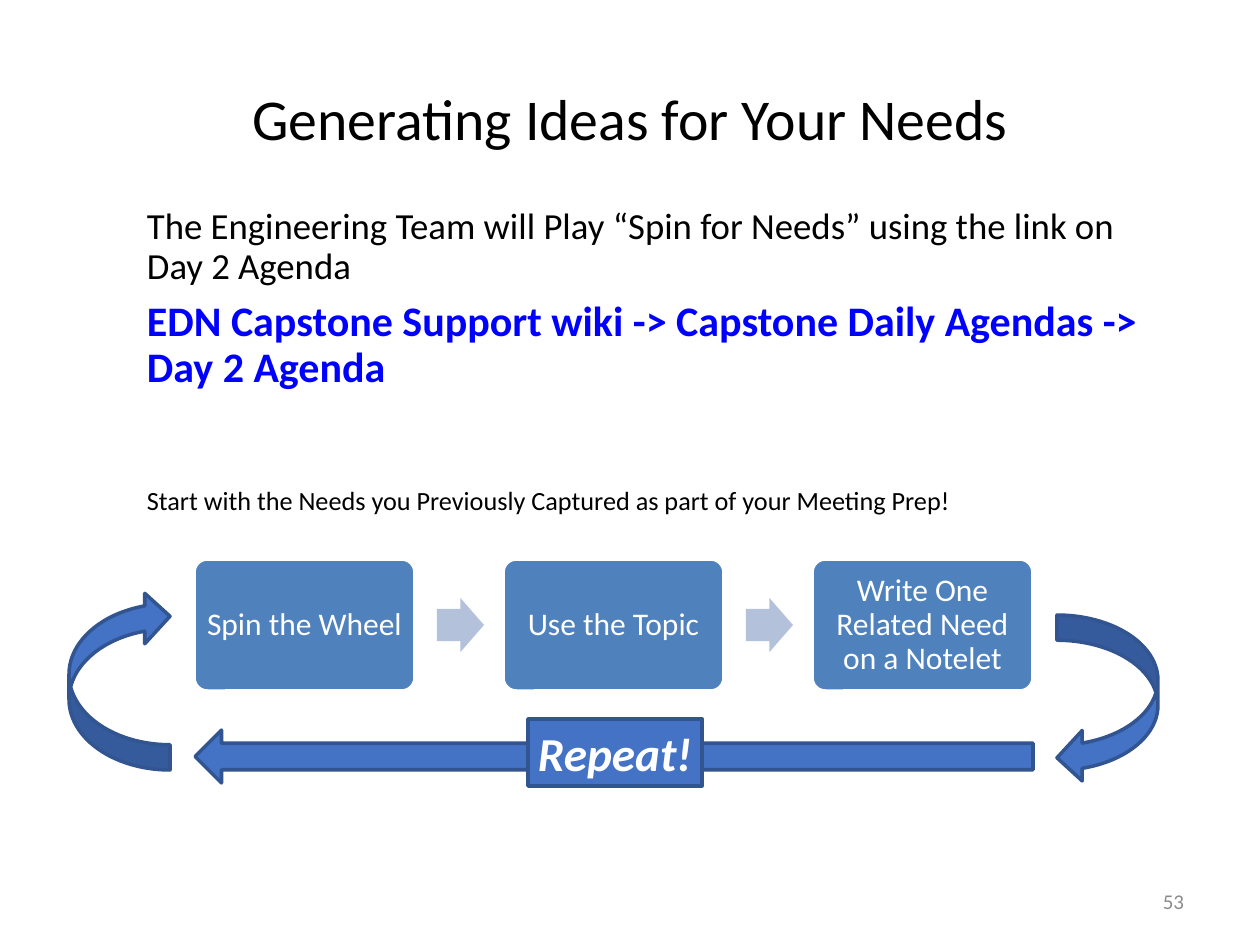
from pptx import Presentation
from pptx.dml.color import RGBColor
from pptx.enum.shapes import MSO_SHAPE as Kind
from pptx.enum.text import MSO_ANCHOR as Anchor, PP_ALIGN as Align
from pptx.util import Emu, Pt

SCALE = 914400 / 126
BLACK = RGBColor(0x00, 0x00, 0x00)
WHITE = RGBColor(0xFF, 0xFF, 0xFF)
LINK = RGBColor(0x00, 0x00, 0xFF)
GREY = RGBColor(0x8C, 0x8C, 0x8C)
STEP = RGBColor(0x4F, 0x81, 0xBD)
PALE = RGBColor(0xB3, 0xC1, 0xDB)
BLUE = RGBColor(0x44, 0x72, 0xC4)
EDGE = RGBColor(0x32, 0x54, 0x90)


def px(num):
    return Emu(round(num * SCALE))


def write(para, text, size=18, color=BLACK, bold=False, slant=False,
          align=Align.LEFT, lead=0.9, before=0, indent=0):
    para.alignment = align
    para.line_spacing = lead
    para.space_before = Pt(before)
    if indent:
        props = para._p.get_or_add_pPr()
        props.set("marL", str(px(indent)))
        props.set("indent", "0")
    run = para.add_run()
    run.text = text
    font = run.font
    font.name = "Calibri"
    font.size = Pt(size)
    font.bold = bold
    font.italic = slant
    font.color.rgb = color


def frame(shape, anchor=Anchor.MIDDLE, wrap=True, inset=(13, 6)):
    body = shape.text_frame
    body.word_wrap = wrap
    body.vertical_anchor = anchor
    body.margin_left = body.margin_right = px(inset[0])
    body.margin_top = body.margin_bottom = px(inset[1])
    return body


def label(slide, box, anchor=Anchor.MIDDLE):
    return frame(slide.shapes.add_textbox(*map(px, box)), anchor)


def draw(slide, kind, box, fill=BLUE, edge=EDGE, adjust=(), turn=0):
    shape = slide.shapes.add_shape(kind, *map(px, box))
    shape.shadow.inherit = False
    shape.fill.solid()
    shape.fill.fore_color.rgb = fill
    if edge is None:
        shape.line.fill.background()
    else:
        shape.line.color.rgb = edge
        shape.line.width = Pt(2)
    for spot, value in enumerate(adjust):
        shape.adjustments[spot] = value
    shape.rotation = turn
    return shape


def add_title(slide, box):
    body = label(slide, box)
    write(body.paragraphs[0], "Generating Ideas for Your Needs",
          size=33, align=Align.CENTER)


def add_body(slide, box):
    body = label(slide, box, Anchor.TOP)
    lines = [
        ("The Engineering Team will Play “Spin for Needs” using the link on "
         "Day 2 Agenda", dict(size=21, before=7.5)),
        ("EDN Capstone Support wiki -> Capstone Daily Agendas -> Day 2 Agenda",
         dict(size=24, before=7.5, color=LINK, bold=True)),
        ("Start with the Needs you Previously Captured as part of your "
         "Meeting Prep!", dict(size=15, before=55.5)),
    ]
    for spot, (text, style) in enumerate(lines):
        para = body.add_paragraph() if spot else body.paragraphs[0]
        write(para, text, indent=47, **style)


def add_steps(slide, box):
    left, top, width, height = box
    steps = ["Spin the Wheel", "Use the Topic",
             "Write One Related Need on a Notelet"]
    wide = 221
    pitch = (width - wide) / (len(steps) - 1)
    for spot, text in enumerate(steps):
        x = left + spot * pitch
        if spot:
            draw(slide, Kind.RIGHT_ARROW, (x - 66, top + 39, 47, 54),
                 fill=PALE, edge=None, adjust=(0.6, 0.5))
        card = draw(slide, Kind.ROUNDED_RECTANGLE, (x, top, wide, height),
                    fill=STEP, edge=WHITE, adjust=(0.1,))
        write(frame(card, inset=(9, 9)).paragraphs[0], text,
              color=WHITE, align=Align.CENTER)


def add_loop(slide, box):
    left, top, width, height = box
    bend = (0.25, 0.5, 0.25)
    draw(slide, Kind.RIGHT_ARROW, (left + 126, top + 139, 838, 53), turn=180)
    draw(slide, Kind.CURVED_LEFT_ARROW,
         (left + width - 101, top + 24, 101, 168), adjust=bend)
    draw(slide, Kind.CURVED_LEFT_ARROW, (left, top, 101, 179),
         adjust=bend, turn=180)
    sign = draw(slide, Kind.RECTANGLE, (left + 459, top + 128, 174, 67))
    body = frame(sign, wrap=False, inset=(9, 5))
    write(body.paragraphs[0], "Repeat!", size=27, color=WHITE, bold=True,
          slant=True, align=Align.CENTER, lead=1.0)


def add_number(slide, box):
    write(label(slide, box).paragraphs[0], "53", size=12, color=GREY,
          align=Align.RIGHT, lead=1.0)


def main():
    deck = Presentation()
    deck.slide_width = px(1260)
    deck.slide_height = px(945)
    slide = deck.slides.add_slide(deck.slide_layouts[6])
    add_title(slide, (87, 53, 1086, 137))
    add_steps(slide, (194, 559, 839, 132))
    add_loop(slide, (69, 591, 1089, 195))
    add_body(slide, (87, 202, 1086, 450))
    add_number(slide, (903, 876, 294, 50))
    deck.save("out.pptx")


if __name__ == "__main__":
    main()
